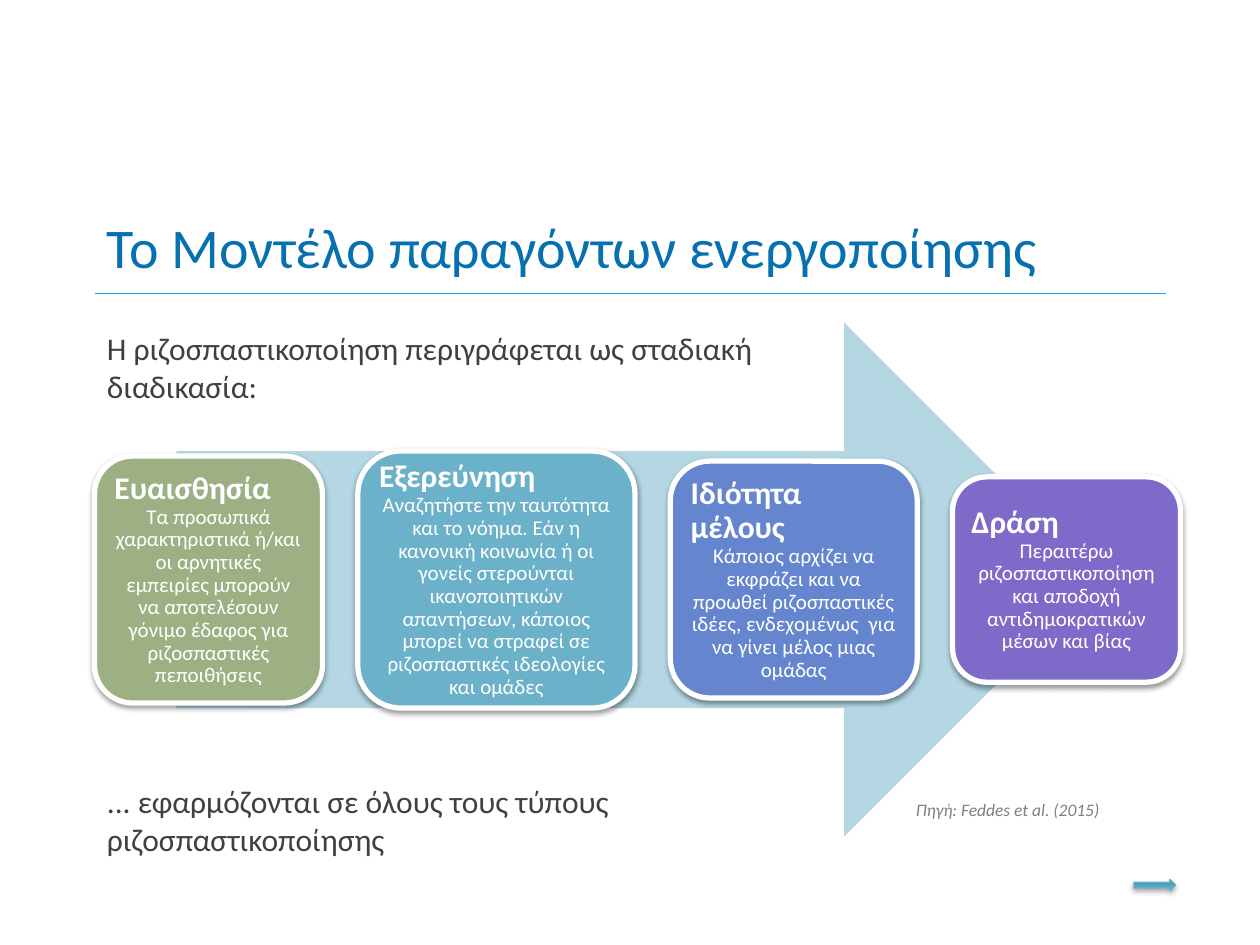
from copy import deepcopy
from lxml.etree import SubElement
from pptx import Presentation
from pptx.dml.color import RGBColor
from pptx.enum.shapes import MSO_CONNECTOR, MSO_SHAPE
from pptx.enum.text import MSO_ANCHOR, PP_ALIGN
from pptx.oxml.ns import qn
from pptx.util import Inches, Pt

FONT = "Calibri"
WIDTH, HEIGHT = 10, 7.5
LEFT = 0.75
CARD_GAP, CARD_MIDDLE = 0.28, 4.6

CARDS = [
    ("Ευαισθησία",
     "Τα προσωπικά χαρακτηριστικά ή/και οι αρνητικές εμπειρίες μπορούν να "
     "αποτελέσουν γόνιμο έδαφος για ριζοσπαστικές πεποιθήσεις",
     1.81, 1.96, "9CB084"),
    ("Εξερεύνηση",
     "Αναζητήστε την ταυτότητα και το νόημα. Εάν η κανονική κοινωνία ή οι "
     "γονείς στερούνται ικανοποιητικών απαντήσεων, κάποιος μπορεί να στραφεί "
     "σε ριζοσπαστικές ιδεολογίες και ομάδες",
     2.2, 2.04, "6BB1C9"),
    ("Ιδιότητα μέλους",
     "Κάποιος αρχίζει να εκφράζει και να προωθεί ριζοσπαστικές ιδέες, "
     "ενδεχομένως  για να γίνει μέλος μιας ομάδας",
     1.96, 1.88, "6585CF"),
    ("Δράση",
     "Περαιτέρω ριζοσπαστικοποίηση και αποδοχή αντιδημοκρατικών μέσων και βίας",
     1.81, 1.63, "7E6BC9"),
]
TEXTS = [
    ("Το Μοντέλο παραγόντων ενεργοποίησης", (LEFT, 1.58, 8.5, 0.75),
     dict(size=32, color="0770B1"), MSO_ANCHOR.MIDDLE, True),
    ("Πηγή: Feddes et al. (2015)", (7.17, 6.29, 1.68, 0.27),
     dict(size=10, color="808080", italic=True), MSO_ANCHOR.TOP, False),
    ("Η ριζοσπαστικοποίηση περιγράφεται ως σταδιακή διαδικασία:",
     (LEFT, 2.56, 5.92, 0.71), dict(size=18, color="404040"), MSO_ANCHOR.TOP, True),
    ("... εφαρμόζονται σε όλους τους τύπους ριζοσπαστικοποίησης",
     (LEFT, 6.16, 4.74, 0.71), dict(size=18, color="404040"), MSO_ANCHOR.TOP, True),
]
GRADIENT = [(0, "4589A1"), (0.8, "5AB2D0"), (1, "58B4D4")]


def rgb(value):
    return RGBColor.from_string(value)


def write(p, text, size=18, color="FFFFFF", bold=False, italic=False,
          align=PP_ALIGN.LEFT, spacing=1.0):
    p.alignment = align
    p.line_spacing = spacing
    p.space_before = p.space_after = Pt(0)
    r = p.add_run()
    r.text = text
    r.font.name = FONT
    r.font.size = Pt(size)
    r.font.bold = bold
    r.font.italic = italic
    r.font.color.rgb = rgb(color)


def add_shape(s, kind, box, fill=None, line=None, line_width=1):
    sp = s.shapes.add_shape(kind, *map(Inches, box))
    sp.shadow.inherit = False
    if fill:
        sp.fill.solid()
        sp.fill.fore_color.rgb = rgb(fill)
    if line:
        sp.line.color.rgb = rgb(line)
        sp.line.width = Pt(line_width)
    else:
        sp.line.fill.background()
    return sp


def set_alpha(color_element, percent):
    SubElement(color_element, qn("a:alpha"), val=str(percent * 1000))


def add_shadow(sp, percent, blur, distance):
    effects = sp._element.spPr.find(qn("a:effectLst"))
    shadow = SubElement(effects, qn("a:outerShdw"), blurRad=str(Pt(blur)),
                        dist=str(Pt(distance)), dir="5400000", rotWithShape="0")
    set_alpha(SubElement(shadow, qn("a:srgbClr"), val="000000"), percent)


def add_card(s, x, title, body, width, height, fill):
    box = (x, CARD_MIDDLE - height / 2, width, height)
    sp = add_shape(s, MSO_SHAPE.ROUNDED_RECTANGLE, box, fill, "FFFFFF", 3)
    add_shadow(sp, 38, 3.1, 1.6)
    tf = sp.text_frame
    tf.word_wrap = True
    tf.vertical_anchor = MSO_ANCHOR.MIDDLE
    tf.margin_left = tf.margin_right = tf.margin_top = tf.margin_bottom = Inches(0.07)
    write(tf.paragraphs[0], title, bold=True, spacing=0.9)
    write(tf.add_paragraph(), body, size=12, align=PP_ALIGN.CENTER, spacing=0.9)


def add_text(s, text, box, style, anchor, wrap):
    tf = s.shapes.add_textbox(*map(Inches, box)).text_frame
    tf.word_wrap = wrap
    tf.vertical_anchor = anchor
    write(tf.paragraphs[0], text, **style)


def add_next_arrow(s):
    sp = add_shape(s, MSO_SHAPE.RIGHT_ARROW, (9, 6.98, 0.33, 0.09),
                   line="66AEC7", line_width=0.75)
    sp._element.spPr.xfrm.set("flipV", "1")
    sp.fill.gradient()
    sp.fill.gradient_angle = 90
    stops = sp._element.spPr.find(qn("a:gradFill")).find(qn("a:gsLst"))
    stops.append(deepcopy(stops[-1]))
    for stop, (position, color) in zip(sp.fill.gradient_stops, GRADIENT):
        stop.position = position
        stop.color.rgb = rgb(color)
    add_shadow(sp, 35, 3.1, 1.8)


def main():
    prs = Presentation()
    prs.slide_width, prs.slide_height = Inches(WIDTH), Inches(HEIGHT)
    s = prs.slides.add_slide(prs.slide_layouts[6])

    rule = s.shapes.add_connector(MSO_CONNECTOR.STRAIGHT, Inches(LEFT), Inches(2.33),
                                  Inches(WIDTH - LEFT), Inches(2.33))
    rule.line.color.rgb = rgb("0BA7DF")
    rule.line.width = Pt(0.75)
    SubElement(rule._element.spPr, qn("a:effectLst"))

    arrow = add_shape(s, MSO_SHAPE.RIGHT_ARROW, (1.4, 2.56, 7.34, 4.08), "6BB1C9")
    set_alpha(arrow._element.spPr.find(qn("a:solidFill"))[0], 50)

    x = LEFT
    for title, body, width, height, fill in CARDS:
        add_card(s, x, title, body, width, height, fill)
        x += width + CARD_GAP

    for item in TEXTS:
        add_text(s, *item)
    add_next_arrow(s)
    prs.save("out.pptx")


if __name__ == "__main__":
    main()
